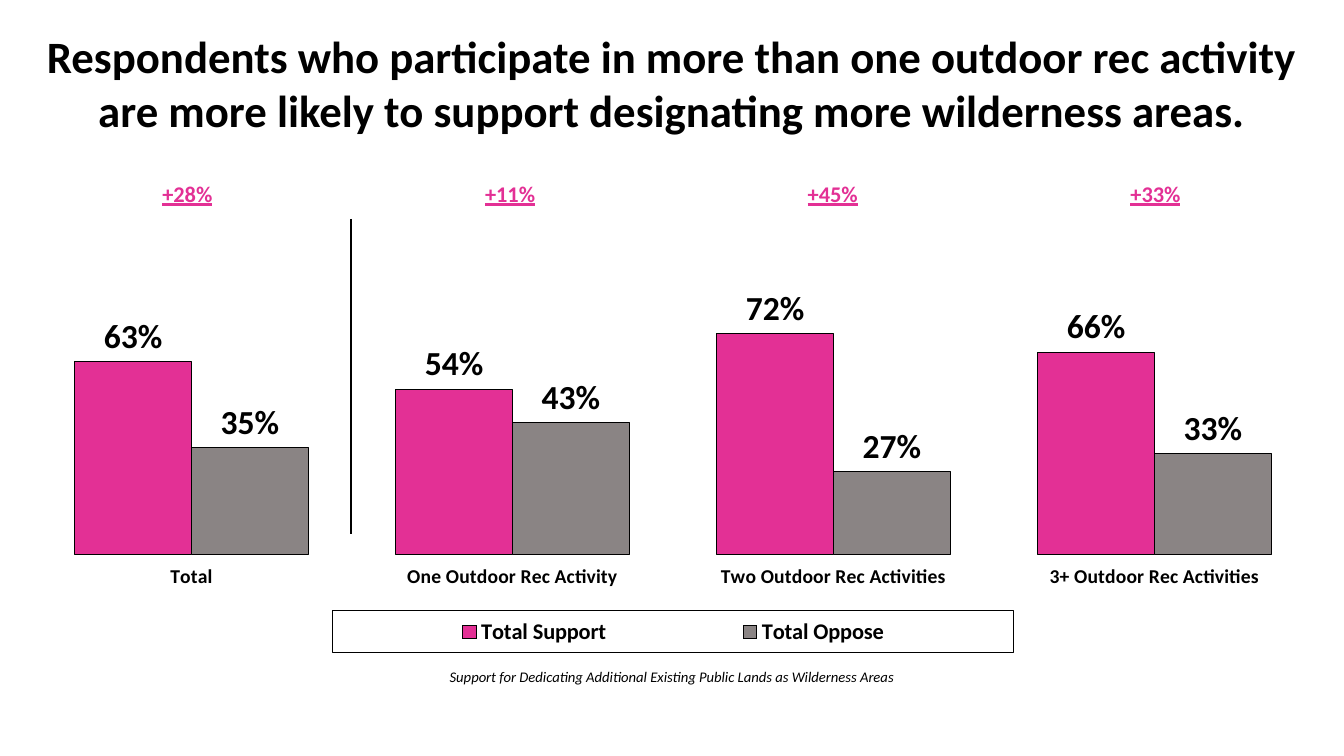
from dataclasses import dataclass

from pptx import Presentation
from pptx.chart.data import CategoryChartData
from pptx.dml.color import RGBColor
from pptx.enum.chart import XL_CHART_TYPE as ChartType
from pptx.enum.chart import XL_LABEL_POSITION as LabelPos
from pptx.enum.chart import XL_LEGEND_POSITION as LegendPos
from pptx.enum.chart import XL_TICK_MARK as Tick
from pptx.enum.shapes import MSO_CONNECTOR as Connector
from pptx.enum.text import MSO_ANCHOR as Anchor
from pptx.enum.text import PP_ALIGN as Align
from pptx.oxml import parse_xml
from pptx.oxml.ns import nsdecls, qn
from pptx.oxml.xmlchemy import OxmlElement
from pptx.util import Emu, Pt

EMU_PER_PX = 914400 / 100.8
FONT = "Calibri"
COLORS = {"black": "000000", "support": "E33095", "oppose": "8A8484"}


@dataclass(frozen=True)
class Box:
    left: int
    top: int
    width: int
    height: int

    def emu(self) -> list[Emu]:
        return [px(n) for n in (self.left, self.top, self.width, self.height)]


@dataclass(frozen=True)
class Series:
    name: str
    values: tuple[float, ...]
    color: str


@dataclass(frozen=True)
class Caption:
    text: str
    box: Box
    size: float
    bold: bool = False
    italic: bool = False


CHART_BOX = Box(31, 162, 1284, 558)
PLOT_BOX = Box(31, 248, 1284, 310)
LEGEND_BOX = Box(333, 611, 681, 42)
MARGINS_BOX = Box(26, 174, 1291, 41)

CATEGORIES = ("Total", "One Outdoor Rec Activity",
              "Two Outdoor Rec Activities", "3+ Outdoor Rec Activities")
SERIES = (
    Series("Total Support", (0.63, 0.54, 0.72, 0.66), "support"),
    Series("Total Oppose", (0.35, 0.43, 0.27, 0.33), "oppose"),
)
MARGINS = ("+28%", "+11%", "+45%", "+33%")
CAPTIONS = (
    Caption("Respondents who participate in more than one outdoor rec activity "
            "are more likely to support designating more wilderness areas.",
            Box(29, 24, 1286, 119), 32, bold=True),
    Caption("Support for Dedicating Additional Existing Public Lands as Wilderness Areas",
            Box(29, 663, 1286, 28), 10.5, italic=True),
)


def px(n: float) -> Emu:
    return Emu(round(n * EMU_PER_PX))


def rgb(name: str) -> RGBColor:
    return RGBColor.from_string(COLORS[name])


def style_font(font, size: float, color: str = "black",
               bold: bool = False, italic: bool = False) -> None:
    font.name, font.size = FONT, Pt(size)
    font.bold, font.italic = bold, italic
    font.color.rgb = rgb(color)


def chart_layout(box: Box, inner: bool = False):
    """Manual layout, as fractions of the chart frame."""
    target = '<c:layoutTarget val="inner"/>' if inner else ""
    fractions = {
        "x": (box.left - CHART_BOX.left) / CHART_BOX.width,
        "y": (box.top - CHART_BOX.top) / CHART_BOX.height,
        "w": box.width / CHART_BOX.width,
        "h": box.height / CHART_BOX.height,
    }
    modes = '<c:xMode val="edge"/><c:yMode val="edge"/>'
    sizes = "".join(f'<c:{k} val="{v:.4f}"/>' for k, v in fractions.items())
    return parse_xml(f'<c:layout {nsdecls("c")}><c:manualLayout>'
                     f"{target}{modes}{sizes}</c:manualLayout></c:layout>")


def add_support_chart(slide) -> None:
    data = CategoryChartData(number_format="0%")
    data.categories = CATEGORIES
    for series in SERIES:
        data.add_series(series.name, series.values)
    chart = slide.shapes.add_chart(
        ChartType.COLUMN_CLUSTERED, *CHART_BOX.emu(), data).chart
    chart.has_title = False
    style_font(chart.font, 18)

    # Axes
    style_font(chart.category_axis.tick_labels.font, 14, bold=True)
    chart.category_axis.format.line.fill.background()
    chart.category_axis.major_tick_mark = Tick.OUTSIDE
    axis = chart.value_axis
    axis.minimum_scale, axis.maximum_scale = -0.01, 1
    axis.has_major_gridlines = False
    axis.visible = False

    # Columns and their labels
    plot = chart.plots[0]
    plot.gap_width, plot.overlap = 75, 0
    plot.vary_by_categories = False
    for bars, series in zip(plot.series, SERIES):
        bars.format.fill.solid()
        bars.format.fill.fore_color.rgb = rgb(series.color)
        bars.format.line.color.rgb = rgb("black")
        bars.format.line.width = Pt(0.75)
        labels = bars.data_labels
        labels.show_value = True
        labels.position = LabelPos.OUTSIDE_END
        labels.number_format, labels.number_format_is_linked = "0%", False
        style_font(labels.font, 24, bold=True)

    # Plot area placement
    plot_area = chart.element.find(".//" + qn("c:plotArea"))
    for old in plot_area.findall(qn("c:layout")):
        plot_area.remove(old)
    plot_area.insert(0, chart_layout(PLOT_BOX, inner=True))

    # Outlined legend
    chart.has_legend = True
    legend = chart.legend
    legend.position = LegendPos.BOTTOM
    legend.include_in_layout = False
    style_font(legend.font, 16, bold=True)
    node = chart.element.find(".//" + qn("c:legend"))
    node.find(qn("c:legendPos")).addnext(chart_layout(LEGEND_BOX))
    node.find(qn("c:overlay")).addnext(parse_xml(
        f'<c:spPr {nsdecls("c", "a")}><a:ln w="{Pt(0.75)}"><a:solidFill>'
        f'<a:srgbClr val="{COLORS["black"]}"/></a:solidFill></a:ln></c:spPr>'))


def add_margin_table(slide) -> None:
    table = slide.shapes.add_table(1, len(MARGINS), *MARGINS_BOX.emu()).table
    table.first_row = table.horz_banding = False
    for cell, text in zip(table.rows[0].cells, MARGINS):
        cell.fill.background()
        cell.vertical_anchor = Anchor.MIDDLE
        p = cell.text_frame.paragraphs[0]
        p.text, p.alignment = text, Align.CENTER
        style_font(p.font, 16, "support", bold=True)
        p.font.underline = True


def add_caption(slide, caption: Caption) -> None:
    tf = slide.shapes.add_textbox(*caption.box.emu()).text_frame
    tf.word_wrap = True
    p = tf.paragraphs[0]
    p.text, p.alignment = caption.text, Align.CENTER
    style_font(p.font, caption.size, bold=caption.bold, italic=caption.italic)


def add_divider(slide, x: int, top: int, bottom: int) -> None:
    line = slide.shapes.add_connector(
        Connector.STRAIGHT, px(x), px(top), px(x), px(bottom))
    line.line.color.rgb = rgb("black")
    line.line.width = Pt(1)
    line.element.spPr.append(OxmlElement("a:effectLst"))


def main() -> None:
    prs = Presentation()
    prs.slide_width, prs.slide_height = px(1344), px(756)
    slide = prs.slides.add_slide(prs.slide_layouts[6])
    add_support_chart(slide)
    add_margin_table(slide)
    for caption in CAPTIONS:
        add_caption(slide, caption)
    add_divider(slide, 351, 219, 534)
    prs.save("out.pptx")


if __name__ == "__main__":
    main()
